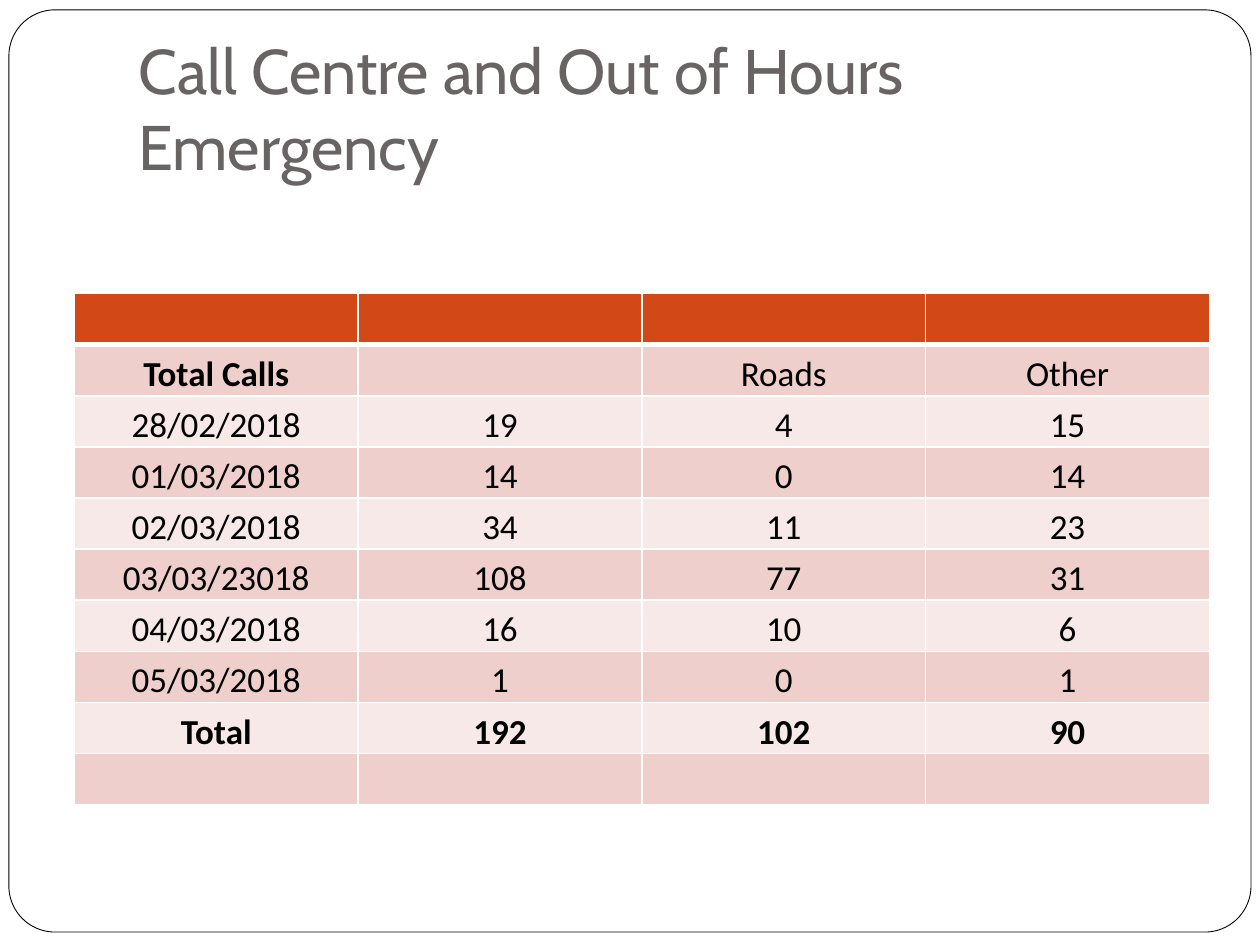
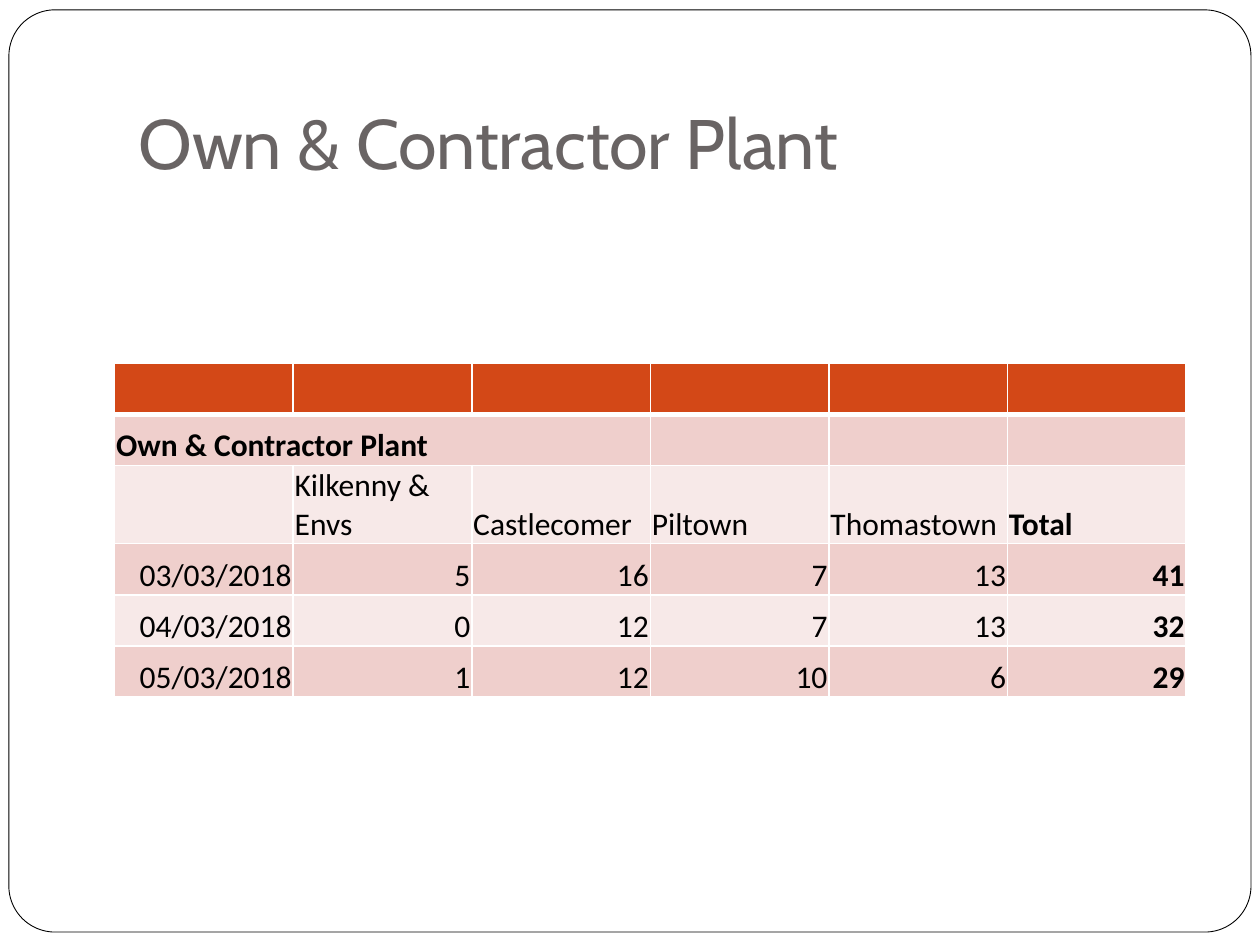
from lxml import etree
from pptx import Presentation
from pptx import util as u
from pptx.dml.color import RGBColor
from pptx.enum import shapes, text
from pptx.oxml import ns

WHITE = RGBColor(0xFF, 0xFF, 0xFF)
BLACK = RGBColor(0x00, 0x00, 0x00)
TITLE_GREY = RGBColor(0x69, 0x64, 0x64)
HEADER_ORANGE = RGBColor(0xD3, 0x48, 0x17)
BANDS = RGBColor(0xEF, 0xCF, 0xCC), RGBColor(0xF7, 0xE9, 0xE8)

TITLE_FONT, TABLE_FONT = "Cabin", "Calibri"
ROW_HEIGHT = u.Cm(1.03)
LEFT, CENTER, RIGHT = text.PP_ALIGN.LEFT, text.PP_ALIGN.CENTER, text.PP_ALIGN.RIGHT

# "bold" and "merge" hold (row, column) positions; "aligns" gives one alignment per row.
PAGES = [
    {
        "title": "Call Centre and Out of Hours Emergency",
        "title_size": 36,
        "left": 1.5, "top": 5.92, "column_width": 5.72, "size": 20,
        "rows": [
            ["", "", "", ""],
            ["Total Calls", "", "Roads", "Other"],
            ["28/02/2018", "19", "4", "15"],
            ["01/03/2018", "14", "0", "14"],
            ["02/03/2018", "34", "11", "23"],
            ["03/03/23018", "108", "77", "31"],
            ["04/03/2018", "16", "10", "6"],
            ["05/03/2018", "1", "0", "1"],
            ["Total", "192", "102", "90"],
            ["", "", "", ""],
        ],
        "aligns": [CENTER] * 10,
        "bold": {(1, 0)} | {(8, column) for column in range(4)},
        "merge": None,
    },
    {
        "title": "Own & Contractor Plant",
        "title_size": 40,
        "left": 2.31, "top": 7.32, "column_width": 3.6, "size": 18,
        "rows": [
            ["", "", "", "", "", ""],
            ["Own & Contractor Plant", "", "", "", "", ""],
            ["", "Kilkenny & Envs", "Castlecomer", "Piltown", "Thomastown", "Total"],
            ["03/03/2018", "5", "16", "7", "13", "41"],
            ["04/03/2018", "0", "12", "7", "13", "32"],
            ["05/03/2018", "1", "12", "10", "6", "29"],
        ],
        "aligns": [LEFT] * 3 + [RIGHT] * 3,
        "bold": {(1, 0)} | {(row, 5) for row in range(2, 6)},
        "merge": ((1, 0), (1, 2)),
    },
]


def write(frame, words, *, font, size, color, bold=False, align=LEFT):
    para = frame.paragraphs[0]
    para.alignment = align
    span = para.add_run()
    span.text = words
    span.font.name = font
    span.font.size = u.Pt(size)
    span.font.bold = bold
    span.font.color.rgb = color


def add_borders(cell, **widths):
    """Give the cell white borders; widths in points by side: L, R, T, B."""
    properties = cell._tc.get_or_add_tcPr()
    for side in "LRTB":
        line = etree.SubElement(properties, ns.qn(f"a:ln{side}"),
                                w=str(u.Pt(widths.get(side, 1))))
        fill = etree.SubElement(line, ns.qn("a:solidFill"))
        etree.SubElement(fill, ns.qn("a:srgbClr"), val=str(WHITE))


def style_layout_title(layout):
    title = layout.placeholders[0]
    title.left, title.top = u.Cm(2.54), u.Cm(0.76)
    title.width, title.height = u.Cm(21.59), u.Cm(3.18)
    frame = title.text_frame
    frame.vertical_anchor = text.MSO_ANCHOR.BOTTOM
    frame.auto_size = text.MSO_AUTO_SIZE.NONE
    frame.margin_left = frame.margin_right = frame.margin_bottom = u.Cm(0.25)
    frame.margin_top = u.Cm(0.13)


def move_border_to_layout(page, layout):
    """Draw the rounded page border on a page, then move it behind the layout's parts."""
    border = page.shapes.add_shape(shapes.MSO_SHAPE.ROUNDED_RECTANGLE,
                                   u.Cm(0.18), u.Cm(0.2), u.Cm(25.04), u.Cm(18.59))
    border.adjustments[0] = 0.05
    border.shadow.inherit = False
    border.fill.solid()
    border.fill.fore_color.rgb = WHITE
    border.line.color.rgb = BLACK
    border.line.width = u.Pt(0.5)
    border.element.xpath("./p:nvSpPr/p:cNvPr")[0].set("id", "20")
    layout.shapes[0].element.addprevious(border.element)


def add_call_table(page, content):
    rows = content["rows"]
    columns = len(rows[0])
    width = u.Cm(content["column_width"])
    table = page.shapes.add_table(len(rows), columns, u.Cm(content["left"]),
                                  u.Cm(content["top"]), width * columns,
                                  ROW_HEIGHT * len(rows)).table
    for r, row in enumerate(rows):
        for c, words in enumerate(row):
            cell = table.cell(r, c)
            add_borders(cell, T=3 if r == 1 else 1, B=3 if r == 0 else 1)
            cell.fill.solid()
            cell.fill.fore_color.rgb = BANDS[(r - 1) % 2] if r else HEADER_ORANGE
            if words:
                cell.vertical_anchor = text.MSO_ANCHOR.BOTTOM
                cell.margin_left = cell.margin_right = cell.margin_top = u.Cm(0.03)
                cell.margin_bottom = 0
                write(cell.text_frame, words, font=TABLE_FONT, size=content["size"],
                      color=BLACK, bold=(r, c) in content["bold"],
                      align=content["aligns"][r])
    if content["merge"]:
        first, last = content["merge"]
        table.cell(*first).merge(table.cell(*last))


def main():
    deck = Presentation()
    deck.slide_width, deck.slide_height = u.Cm(25.4), u.Cm(19.05)
    layout = deck.slide_layouts.get_by_name("Title Only")
    style_layout_title(layout)
    for content in PAGES:
        page = deck.slides.add_slide(layout)
        write(page.shapes.title.text_frame, content["title"], font=TITLE_FONT,
              size=content["title_size"], color=TITLE_GREY)
        add_call_table(page, content)
    move_border_to_layout(deck.slides[0], layout)
    deck.save("out.pptx")


if __name__ == "__main__":
    main()
